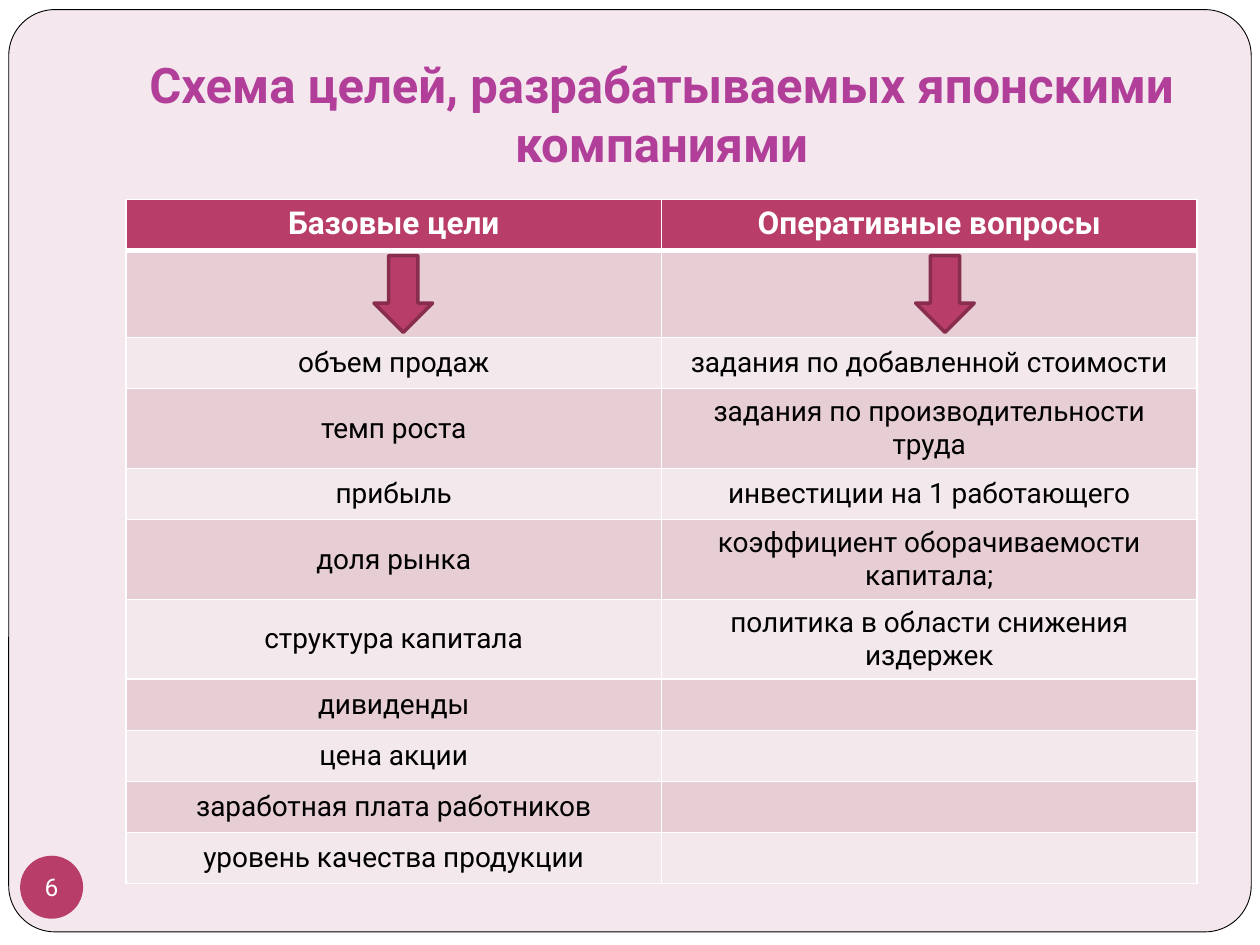
"""Build the slide with the scheme of goals set by Japanese companies."""
from typing import NamedTuple, Optional

from lxml import etree
from pptx import Presentation
from pptx.dml.color import RGBColor
from pptx.enum import shapes, text
from pptx.oxml import ns
from pptx.util import Pt

WHITE = RGBColor(0xFF, 0xFF, 0xFF)
BLACK = RGBColor(0x00, 0x00, 0x00)
BLUSH = RGBColor(0xF4, 0xE7, 0xED)
PURPLE = RGBColor(0xB1, 0x3F, 0x9A)
CRIMSON = RGBColor(0xB8, 0x3D, 0x68)
DARK_CRIMSON = RGBColor(0x88, 0x2D, 0x4D)
BANDS = (RGBColor(0xF3, 0xE8, 0xEB), RGBColor(0xE6, 0xCE, 0xD4))
FONT = "Roboto"
SINGLE, DOUBLE, ARROW_ROW = 29.2, 44.7, 49.7


class Box(NamedTuple):
    left: float
    top: float
    width: float
    height: float


class Style(NamedTuple):
    size: float
    color: RGBColor
    bold: bool = False


class Figure(NamedTuple):
    kind: shapes.MSO_SHAPE
    box: Box
    fill: RGBColor
    line: Optional[RGBColor] = None
    line_width: float = 0
    rotation: float = 0


class Row(NamedTuple):
    goal: str
    issue: str
    height: float = SINGLE


TITLE_STYLE = Style(28, PURPLE, True)
HEADER_STYLE = Style(18, WHITE, True)
BODY_STYLE = Style(16, BLACK)
NUMBER_STYLE = Style(14, WHITE)

BACKDROP = Figure(shapes.MSO_SHAPE.RECTANGLE, Box(0, 0, 720, 540), WHITE)
PANEL = Figure(shapes.MSO_SHAPE.ROUNDED_RECTANGLE, Box(5, 5.5, 710, 527), BLUSH, BLACK, 0.5)
NUMBER_BADGE = Figure(shapes.MSO_SHAPE.OVAL, Box(11.5, 489, 36, 36), CRIMSON)
ARROWS = [
    Figure(shapes.MSO_SHAPE.RIGHT_ARROW, Box(left, 151.2, 43.9, 33.5), CRIMSON, DARK_CRIMSON, 2, 90)
    for left in (208.5, 518)
]
TITLE_BOX = Box(72, 21.6, 612, 90)
TABLE_BOX = Box(72, 114, 612, 387)

ROWS = [
    Row("Базовые цели", "Оперативные вопросы"),
    Row("", "", ARROW_ROW),
    Row("объем продаж", "задания по добавленной стоимости"),
    Row("темп роста", "задания по производительности труда", DOUBLE),
    Row("прибыль", "инвестиции на 1 работающего"),
    Row("доля рынка", "коэффициент оборачиваемости капитала;", DOUBLE),
    Row("структура капитала", "политика в области снижения издержек", DOUBLE),
    Row("дивиденды", ""),
    Row("цена акции", ""),
    Row("заработная плата работников", ""),
    Row("уровень качества продукции", ""),
]


def points(box: Box) -> list:
    """Turn a box into lengths."""
    return [Pt(value) for value in box]


def write(frame, words: str, style: Style) -> None:
    """Put one centred run into a text frame."""
    paragraph = frame.paragraphs[0]
    paragraph.alignment = text.PP_ALIGN.CENTER
    run = paragraph.add_run()
    run.text = words
    run.font.name = FONT
    run.font.size = Pt(style.size)
    run.font.bold = style.bold
    run.font.color.rgb = style.color


def draw(slide, figure: Figure):
    """Draw a preset shape."""
    shape = slide.shapes.add_shape(figure.kind, *points(figure.box))
    shape.shadow.inherit = False
    shape.rotation = figure.rotation
    shape.fill.solid()
    shape.fill.fore_color.rgb = figure.fill
    if figure.line is None:
        shape.line.fill.background()
    else:
        shape.line.color.rgb = figure.line
        shape.line.width = Pt(figure.line_width)
    return shape


def add_title(slide) -> None:
    """Add the slide heading."""
    frame = slide.shapes.add_textbox(*points(TITLE_BOX)).text_frame
    frame.word_wrap = True
    frame.vertical_anchor = text.MSO_ANCHOR.MIDDLE
    frame.margin_bottom = Pt(7.2)
    write(frame, "Схема целей, разрабатываемых японскими компаниями", TITLE_STYLE)


def add_number(slide) -> None:
    """Add the round badge with the slide number."""
    frame = draw(slide, NUMBER_BADGE).text_frame
    frame.margin_left = frame.margin_right = frame.margin_top = frame.margin_bottom = 0
    frame.word_wrap = False
    frame.vertical_anchor = text.MSO_ANCHOR.MIDDLE
    write(frame, "6", NUMBER_STYLE)


def set_borders(cell, top: float, bottom: float) -> None:
    """Give a cell white borders of the given widths."""
    properties = cell._tc.get_or_add_tcPr()
    for side, width in (("L", 1), ("R", 1), ("T", top), ("B", bottom)):
        line = etree.SubElement(properties, ns.qn(f"a:ln{side}"), w=str(Pt(width)))
        fill = etree.SubElement(line, ns.qn("a:solidFill"))
        etree.SubElement(fill, ns.qn("a:srgbClr"), val=str(WHITE))


def add_goals_table(slide) -> None:
    """Add the table of goals and issues."""
    table = slide.shapes.add_table(len(ROWS), 2, *points(TABLE_BOX)).table
    for index, row in enumerate(ROWS):
        table.rows[index].height = Pt(row.height)
        header = index == 0
        for column, words in enumerate((row.goal, row.issue)):
            cell = table.cell(index, column)
            set_borders(cell, 3 if index == 1 else 1, 3 if header else 1)
            cell.fill.solid()
            cell.fill.fore_color.rgb = CRIMSON if header else BANDS[index % 2]
            if not header:
                cell.vertical_anchor = text.MSO_ANCHOR.MIDDLE
            if words:
                write(cell.text_frame, words, HEADER_STYLE if header else BODY_STYLE)


def main() -> None:
    """Build and save the slide."""
    deck = Presentation()
    deck.slide_width, deck.slide_height = Pt(720), Pt(540)
    slide = deck.slides.add_slide(deck.slide_layouts[6])
    slide.background.fill.solid()
    slide.background.fill.fore_color.rgb = BLUSH
    draw(slide, BACKDROP)
    draw(slide, PANEL).adjustments[0] = 0.05
    add_title(slide)
    add_number(slide)
    add_goals_table(slide)
    for arrow in ARROWS:
        draw(slide, arrow)
    deck.save("out.pptx")


if __name__ == "__main__":
    main()
